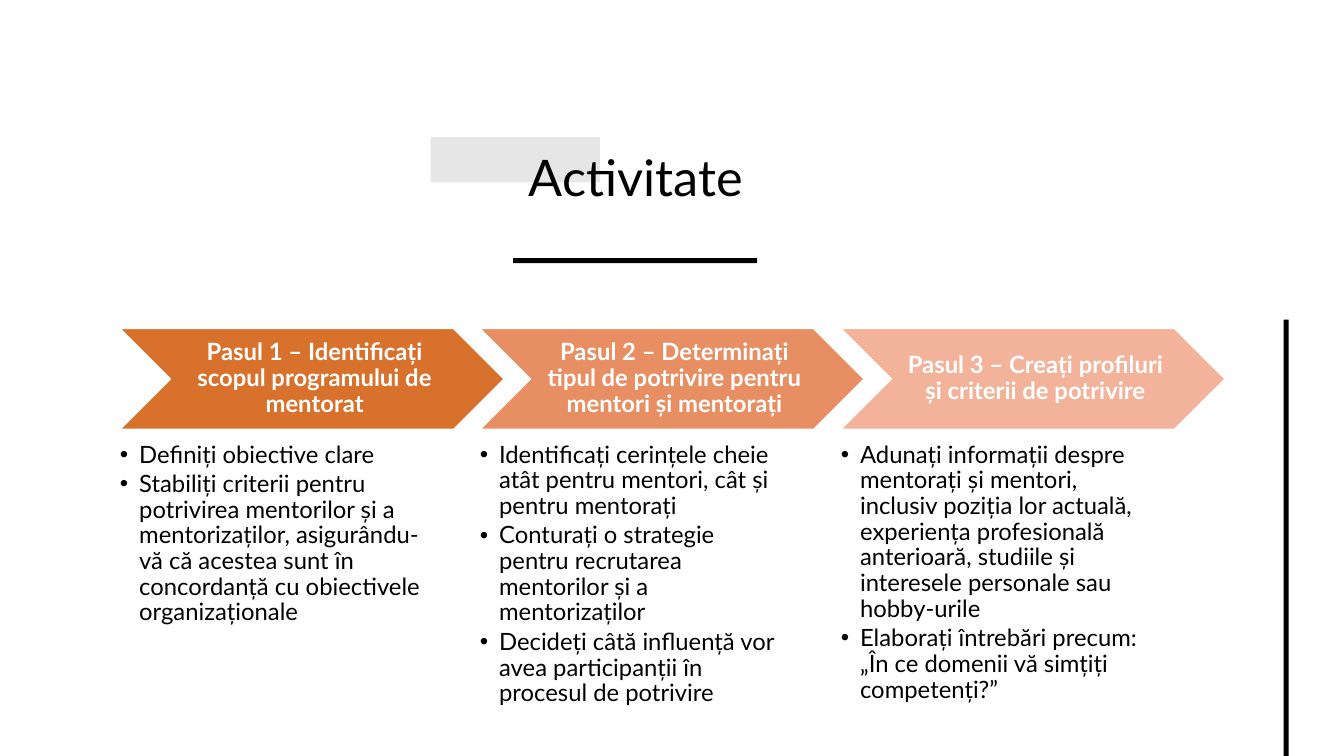
from pptx import Presentation
from pptx.dml.color import RGBColor
from pptx.enum.shapes import MSO_SHAPE as Shape
from pptx.enum.text import MSO_ANCHOR as Anchor, MSO_AUTO_SIZE as AutoSize, PP_ALIGN as Align
from pptx.oxml.ns import qn
from pptx.util import Pt
from lxml.etree import SubElement

PX = 9144  # 100 px to the inch
BLACK, WHITE = "000000", "FFFFFF"
STEPS = [
    ("D7712C", "Pasul 1 – Identificați scopul programului de mentorat", [
        "Definiți obiective clare",
        "Stabiliți criterii pentru potrivirea mentorilor și a mentorizaților, "
        "asigurându-vă că acestea sunt în concordanță cu obiectivele organizaționale",
    ]),
    ("E78F62", "Pasul 2 – Determinați tipul de potrivire pentru mentori și mentorați", [
        "Identificați cerințele cheie atât pentru mentori, cât și pentru mentorați",
        "Conturați o strategie pentru recrutarea mentorilor și a mentorizaților",
        "Decideți câtă influență vor avea participanții în procesul de potrivire",
    ]),
    ("F3B39B", "Pasul 3 – Creați profiluri și criterii de potrivire", [
        "Adunați informații despre mentorați și mentori, inclusiv poziția lor actuală, "
        "experiența profesională anterioară, studiile și interesele personale sau hobby-urile",
        "Elaborați întrebări precum: „În ce domenii vă simțiți competenți?”",
    ]),
]

deck = Presentation()
deck.slide_width, deck.slide_height = 1333 * PX, 750 * PX
page = deck.slides.add_slide(deck.slide_layouts[5])


def add_filled(kind, left, top, width, height, color):
    shape = page.shapes.add_shape(kind, left * PX, top * PX, width * PX, height * PX)
    shape.shadow.inherit = False
    shape.fill.solid()
    shape.fill.fore_color.rgb = RGBColor.from_string(color)
    shape.line.fill.background()
    return shape


def style(para, size, color, bold=False):
    para.line_spacing = 0.9
    para.font.name = "Lato"
    para.font.size = Pt(size)
    para.font.bold = bold
    para.font.color.rgb = RGBColor.from_string(color)


# Title with its grey block behind and rule below
title_block = add_filled(Shape.RECTANGLE, 427, 136, 168, 45, "E7E6E6")
title = page.shapes.title
title_block.element.addnext(title.element)
title.left, title.top, title.width, title.height = 184 * PX, 117 * PX, 893 * PX, 94 * PX
title.text_frame.text = "Activitate"
title.text_frame.auto_size = AutoSize.NONE
title.text_frame.vertical_anchor = Anchor.BOTTOM
title.text_frame.paragraphs[0].alignment = Align.CENTER
style(title.text_frame.paragraphs[0], 36, BLACK)

add_filled(Shape.RECTANGLE, 509, 256, 242, 5, BLACK)
add_filled(Shape.RECTANGLE, 1273, 317, 5, 435, BLACK)

# Steps: a chevron over its list
for index, (color, heading, points) in enumerate(STEPS):
    left = 119 + index * 715 // 2

    chevron = add_filled(Shape.CHEVRON, left, 326, 381, 100, color)
    chevron.line.color.rgb = RGBColor.from_string(WHITE)
    chevron.line.width = Pt(1)
    frame = chevron.text_frame
    frame.word_wrap = True
    frame.vertical_anchor = Anchor.MIDDLE
    frame.margin_left = 7 * PX
    frame.margin_top = frame.margin_right = frame.margin_bottom = 2 * PX
    frame.text = heading
    frame.paragraphs[0].alignment = Align.CENTER
    style(frame.paragraphs[0], 17, WHITE, bold=True)

    box = page.shapes.add_textbox(left * PX, 439 * PX, 305 * PX, 264 * PX)
    frame = box.text_frame
    frame.word_wrap = True
    frame.margin_left = frame.margin_top = frame.margin_right = frame.margin_bottom = 0
    frame.text = "\n".join(points)
    for para in frame.paragraphs:
        properties = para._p.get_or_add_pPr()
        properties.set("marL", str(19 * PX))
        properties.set("indent", str(-19 * PX))
        SubElement(properties, qn("a:buFont"), typeface="Arial")
        SubElement(properties, qn("a:buChar"), char="•")
        para.space_after = Pt(2.6)
        style(para, 17, BLACK)

deck.save("out.pptx")
